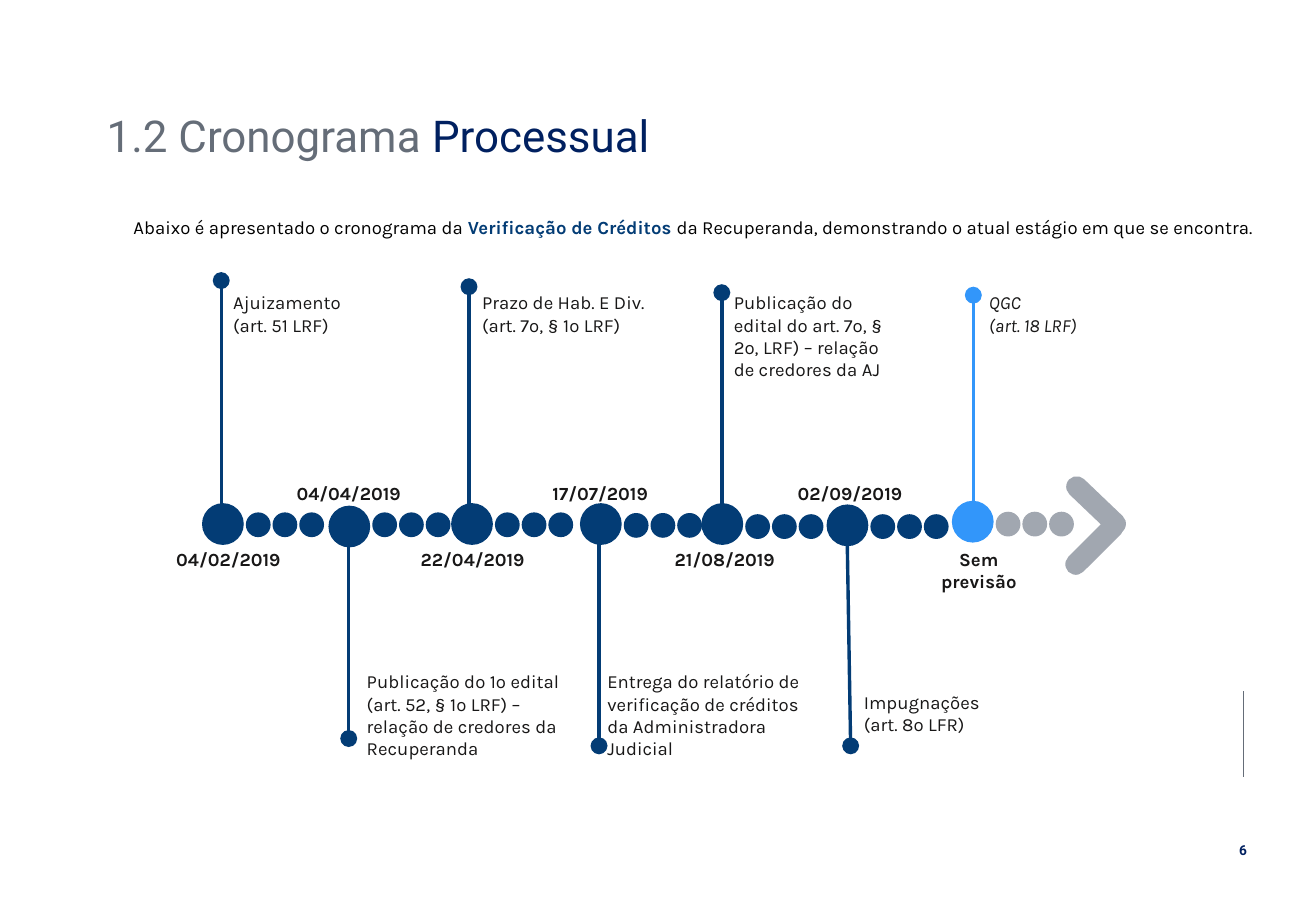
from dataclasses import dataclass

from lxml import etree
from pptx import Presentation
from pptx import util as u
from pptx.dml.color import RGBColor
from pptx.enum import shapes, text
from pptx.oxml.ns import qn


@dataclass(frozen=True)
class Theme:
    navy: str = "033C75"
    title_navy: str = "002060"
    sky: str = "3296FA"
    silver: str = "A1A7B0"
    slate: str = "656D78"
    ink: str = "181717"
    black: str = "000000"
    body_font: str = "Karla"
    title_font: str = "Roboto"
    title_size: float = 26
    body_size: float = 11
    page_size: float = 8.1


@dataclass(frozen=True)
class Stage:
    """A milestone; positions are percentages of the slide's width and height."""
    date: str
    date_x: float
    note: str
    note_box: tuple
    node: tuple
    dots_y: float
    pin: tuple
    lean: float = 0
    pending: bool = False


T = Theme()
WIDTH, HEIGHT = u.Inches(10.83), u.Inches(7.5)
NODE, DOT = u.Inches(0.33), u.Inches(0.19)
DOT_START, DOT_STEP, DOTS = 2.68, 2.03, 3
DATE_ABOVE, DATE_BELOW, DATE_WIDTH, DATE_HEIGHT = 52.27, 59.47, 10.16, 3.87

STAGES = [
    Stage("04/02/2019", 17.36, "Ajuizamento (art. 51 LRF)",
          (16.81, 31.33, 10.34, 6.27), (16.94, 57.53), 57.6, (16.81, 30.8)),
    Stage("04/04/2019", 26.5,
          "Publicação do 1º edital (art. 52, § 1º LRF) – relação de credores da Recuperanda",
          (26.96, 72.93, 18.37, 8.8), (26.55, 57.8), 57.6, (26.5, 81.07)),
    Stage("22/04/2019", 35.92, "Prazo de Hab. E Div. (art. 7º, § 1º LRF)",
          (35.73, 31.33, 16.44, 6.27), (35.87, 57.53), 57.6, (35.64, 31.47)),
    Stage("17/07/2019", 45.61,
          "Entrega do relatório de verificação de créditos da Administradora Judicial",
          (45.24, 72.93, 16.44, 8.8), (45.66, 57.53), 57.67, (45.52, 81.87)),
    Stage("21/08/2019", 55.08,
          "Publicação do edital do art. 7º, § 2º, LRF) – relação de credores da AJ",
          (54.85, 31.33, 14.5, 11.2), (54.89, 57.53), 57.8, (54.85, 32.13)),
    Stage("02/09/2019", 64.59, "Impugnações (art. 8º LFR)",
          (64.73, 75.2, 11.63, 6.27), (64.4, 57.67), 57.8, (64.64, 81.87), lean=-0.28),
    Stage("Sem previsão", 74.38, "QGC\n(art. 18 LRF)",
          (74.24, 31.33, 10, 6.27), (73.92, 57.27), 57.53, (73.96, 32.4), pending=True),
]


def across(share):
    return u.Emu(round(WIDTH * share / 100))


def down(share):
    return u.Emu(round(HEIGHT * share / 100))


def add_text(s, content, box, *, font=T.body_font, size=T.body_size, color=T.ink,
             bold=False, italic=False, align=text.PP_ALIGN.LEFT, spacing=None,
             indent=0, wrap=True, anchor=text.MSO_ANCHOR.TOP):
    """Content is a string, or a list of (words, colour, bold) runs."""
    x, y, w, h = box
    tf = s.shapes.add_textbox(across(x), down(y), across(w), down(h)).text_frame
    tf.word_wrap = wrap
    tf.vertical_anchor = anchor
    if isinstance(content, str):
        paragraphs = [[(line, color, bold)] for line in content.split("\n")]
    else:
        paragraphs = [content]
    for i, runs in enumerate(paragraphs):
        p = tf.add_paragraph() if i else tf.paragraphs[0]
        p.alignment = align
        if spacing:
            p.line_spacing = spacing
        if indent:
            p._p.get_or_add_pPr().set("indent", str(across(indent)))
        for words, run_color, run_bold in runs:
            r = p.add_run()
            r.text = words
            f = r.font
            f.name, f.size, f.bold, f.italic = font, u.Pt(size), run_bold, italic
            f.color.rgb = RGBColor.from_string(run_color)


def paint(sp, color):
    sp.shadow.inherit = False
    sp.fill.solid()
    sp.fill.fore_color.rgb = sp.line.color.rgb = RGBColor.from_string(color)
    sp.line.width = u.Pt(1)


def add_circle(s, center, size, color):
    x, y = center
    sp = s.shapes.add_shape(shapes.MSO_SHAPE.OVAL, across(x) - size // 2,
                            down(y) - size // 2, size, size)
    paint(sp, color)


def add_bar(s, box, rotation, color):
    x, y, w, h = box
    sp = s.shapes.add_shape(shapes.MSO_SHAPE.ROUNDED_RECTANGLE,
                            across(x), down(y), across(w), down(h))
    sp.adjustments[0] = 0.5
    sp.rotation = rotation
    paint(sp, color)


def add_line(s, start, end, color, width, knob=False):
    """Draw a straight line, with a round knob at its start if asked."""
    c = s.shapes.add_connector(shapes.MSO_CONNECTOR.STRAIGHT, across(start[0]),
                               down(start[1]), across(end[0]), down(end[1]))
    c.line.color.rgb = RGBColor.from_string(color)
    c.line.width = u.Pt(width)
    if knob:
        etree.SubElement(c.line._get_or_add_ln(), qn("a:headEnd"),
                         type="oval", w="lg", len="lg")
    etree.SubElement(c._element.spPr, qn("a:effectLst"))


def add_stage(s, stage, date_y):
    color = T.sky if stage.pending else T.navy
    pin_x, pin_y = stage.pin
    node_x, node_y = stage.node
    add_line(s, stage.pin, (pin_x + stage.lean, node_y), color, 2, knob=True)
    add_circle(s, stage.node, NODE, color)
    for k in range(DOTS):
        add_circle(s, (node_x + DOT_START + k * DOT_STEP, stage.dots_y), DOT,
                   T.silver if stage.pending else T.navy)
    add_text(s, stage.note, stage.note_box, italic=stage.pending)
    add_text(s, stage.date, (stage.date_x - DATE_WIDTH / 2, date_y, DATE_WIDTH, DATE_HEIGHT),
             bold=True, align=text.PP_ALIGN.CENTER)


def main():
    prs = Presentation()
    prs.slide_width, prs.slide_height = WIDTH, HEIGHT
    s = prs.slides.add_slide(prs.slide_layouts[6])

    add_text(s, [("1.2 Cronograma ", T.slate, False), ("Processual", T.title_navy, False)],
             (7.2, 11.6, 75.53, 7.07), font=T.title_font, size=T.title_size,
             spacing=0.9, anchor=text.MSO_ANCHOR.MIDDLE)
    add_text(s, [("Abaixo é apresentado o cronograma da ", T.black, False),
                 ("Verificação de Créditos ", T.navy, True),
                 ("da Recuperanda, demonstrando o atual estágio em que se encontra.",
                  T.black, False)],
             (6.37, 22.67, 93.91, 4), align=text.PP_ALIGN.JUSTIFY, spacing=1.14, indent=2.86)

    for i, stage in enumerate(STAGES):
        add_stage(s, stage, DATE_ABOVE if i % 2 else DATE_BELOW)
    add_bar(s, (80.52, 54.4, 5.54, 2.13), 43.7, T.silver)
    add_bar(s, (80.42, 58.8, 5.54, 2.13), 315, T.silver)

    add_line(s, (94.46, 75.87), (94.46, 85.33), T.slate, 0.5)
    add_text(s, "6", (92.89, 91.73, 3.14, 3.2), font=T.title_font, size=T.page_size,
             color=T.title_navy, bold=True, align=text.PP_ALIGN.CENTER, wrap=False)
    prs.save("out.pptx")


if __name__ == "__main__":
    main()
